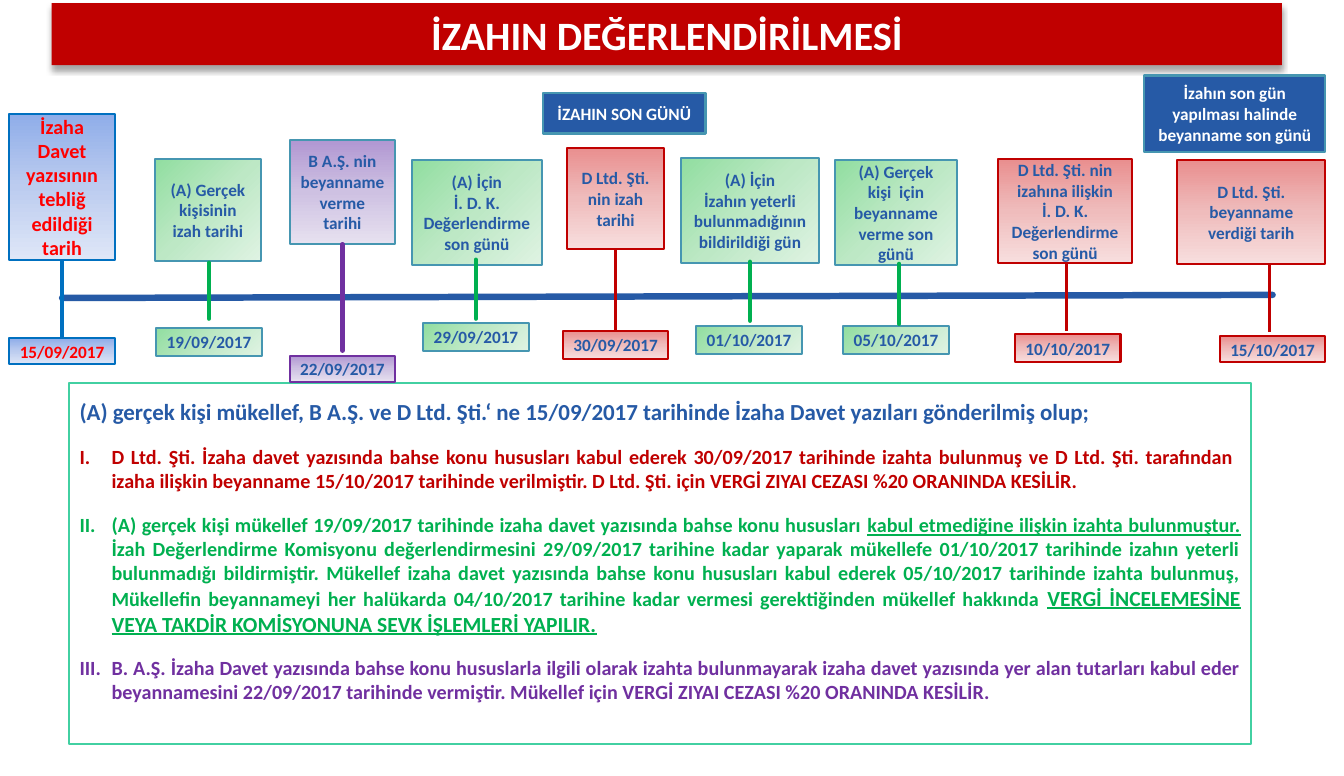
from copy import deepcopy

from lxml.etree import SubElement
from pptx import Presentation
from pptx.dml.color import RGBColor
from pptx.enum.shapes import MSO_CONNECTOR, MSO_SHAPE
from pptx.enum.text import MSO_ANCHOR, PP_ALIGN
from pptx.oxml.ns import qn
from pptx.util import Inches, Pt

FONT = "Calibri"
WHITE, BLUE, TEAL = "FFFFFF", "265AA6", "4696B1"
RED, GREEN, PURPLE, SKY = "C00000", "00B050", "7030A0", "0070C0"

TITLE = "İZAHIN DEĞERLENDİRİLMESİ"

# gradient colours, clockwise angle, box border, date border, stem colour, stem width
STYLES = {
    "invite": (("8FADE9", "BCCCEF", "DEE6F7"), 90, SKY, SKY, SKY, 2.25),
    "person": (("91DEA0", "BDE8C5", "DFF3E3"), 45, TEAL, TEAL, GREEN, 3),
    "b_company": (("B197D2", "CEC1E2", "E7E1F0"), 90, TEAL, PURPLE, PURPLE, 3),
    "d_company": (("E98F8F", "EFBCBC", "F7DEDE"), 90, RED, RED, RED, 2.25),
}

# style, text, box (left, top, width, height), date, date (left, top, height), stem (x, top, bottom)
EVENTS = [
    ("invite", "İzaha Davet yazısının tebliğ edildiği tarih", (0.09, 1.1, 1.02, 1.41),
     "15/09/2017", (0.09, 3.27, 0.25), (0.6, 2.51, 3.27)),
    ("person", "(A) Gerçek kişisinin izah tarihi", (1.5, 1.54, 1.02, 0.98),
     "19/09/2017", (1.51, 3.17, 0.27), (2.02, 2.54, 3.08)),
    ("b_company", "B A.Ş. nin beyanname verme tarihi", (2.8, 1.35, 1.02, 1.01),
     "22/09/2017", (2.8, 3.44, 0.25), (3.31, 2.36, 3.39)),
    ("person", "(A) İçin\nİ. D. K. Değerlendirme son günü", (3.98, 1.55, 1.26, 1.01),
     "29/09/2017", (4.09, 3.12, 0.27), (4.6, 2.51, 3.08)),
    ("d_company", "D Ltd. Şti. nin izah tarihi", (5.48, 1.43, 0.94, 0.98),
     "30/09/2017", (5.44, 3.2, 0.27), (5.95, 2.41, 3.2)),
    ("person", "(A) İçin\nİzahın yeterli bulunmadığının\nbildirildiği gün", (6.58, 1.53, 1.34, 1.01),
     "01/10/2017", (6.73, 3.15, 0.27), (7.25, 2.53, 3.1)),
    ("person", "(A) Gerçek kişi  için beyanname verme son günü", (8.07, 1.55, 1.18, 1.01),
     "05/10/2017", (8.15, 3.15, 0.27), (8.69, 2.55, 3.13)),
    ("d_company", "D Ltd. Şti. nin izahına ilişkin\nİ. D. K. Değerlendirme son günü", (9.65, 1.54, 1.29, 1),
     "10/10/2017", (9.81, 3.23, 0.27), (10.31, 2.54, 3.2)),
    ("d_company", "D Ltd. Şti. beyanname verdiği tarih", (11.38, 1.55, 1.43, 1),
     "15/10/2017", (11.79, 3.25, 0.25), (12.27, 2.55, 3.21)),
]
DATE_WIDTH = 1.02

DEADLINES = [
    ("İZAHIN SON GÜNÜ", (5.25, 0.9, 1.57, 0.39)),
    ("İzahın son gün\nyapılması halinde\nbeyanname son günü", (11.06, 0.73, 1.75, 0.74)),
]

INTRO = ("(A) gerçek kişi mükellef, B A.Ş. ve D Ltd. Şti.‘ ne 15/09/2017 tarihinde "
         "İzaha Davet yazıları gönderilmiş olup;")

# colour, runs of (text, size, underlined)
CASES = [
    (RED, [("D Ltd. Şti. İzaha davet yazısında bahse konu hususları kabul ederek 30/09/2017 tarihinde "
            "izahta bulunmuş ve D Ltd. Şti. tarafından  izaha ilişkin beyanname 15/10/2017 tarihinde "
            "verilmiştir. D Ltd. Şti. için VERGİ ZIYAI CEZASI %20 ORANINDA KESİLİR.", 14, False)]),
    (GREEN, [("(A) gerçek kişi mükellef 19/09/2017 tarihinde izaha davet yazısında bahse konu hususları ",
              14, False),
             ("kabul etmediğine ilişkin izahta bulunmuştur. ", 14, True),
             ("İzah Değerlendirme Komisyonu değerlendirmesini 29/09/2017 tarihine kadar yaparak "
              "mükellefe 01/10/2017 tarihinde izahın yeterli bulunmadığı bildirmiştir. Mükellef izaha "
              "davet yazısında bahse konu hususları kabul ederek 05/10/2017 tarihinde izahta bulunmuş, "
              "Mükellefin beyannameyi her halükarda 04/10/2017 tarihine kadar vermesi gerektiğinden "
              "mükellef hakkında ", 14, False),
             ("VERGİ İNCELEMESİNE VEYA TAKDİR KOMİSYONUNA SEVK İŞLEMLERİ YAPILIR.", 15, True)]),
    (PURPLE, [("B. A.Ş. İzaha Davet yazısında bahse konu hususlarla ilgili olarak izahta bulunmayarak "
               "izaha davet yazısında yer alan tutarları kabul eder beyannamesini 22/09/2017 tarihinde "
               "vermiştir. Mükellef için VERGİ ZIYAI CEZASI %20 ORANINDA KESİLİR.", 14, False)]),
]


def rgb(color):
    return RGBColor.from_string(color)


def format_run(r, size, color, underline=False):
    r.font.name, r.font.size, r.font.bold = FONT, Pt(size), True
    r.font.color.rgb = rgb(color)
    if underline:
        r.font.underline = True


def set_text(s, text, size, color):
    """Centre bold text in a shape, one paragraph per line."""
    tf = s.text_frame
    tf.text = text
    tf.word_wrap = True
    tf.vertical_anchor = MSO_ANCHOR.MIDDLE
    for p in tf.paragraphs:
        p.alignment = PP_ALIGN.CENTER
        for r in p.runs:
            format_run(r, size, color)


def fill_gradient(s, colors, angle):
    """Apply three evenly spaced stops; angle is clockwise."""
    s.fill.gradient()
    s.fill.gradient_angle = 360 - angle
    stops = s._element.spPr.find(".//" + qn("a:gsLst"))
    stops.append(deepcopy(stops[0]))
    for i, (stop, color) in enumerate(zip(s.fill.gradient_stops, colors)):
        stop.position = i / 2
        stop.color.rgb = rgb(color)


def add_box(slide, place, border, fill=None):
    s = slide.shapes.add_shape(MSO_SHAPE.RECTANGLE, *map(Inches, place))
    s.shadow.inherit = False
    s.line.color.rgb = rgb(border)
    s.line.width = Pt(1.5)
    if fill:
        s.fill.solid()
        s.fill.fore_color.rgb = rgb(fill)
    return s


def add_line(slide, x1, y1, x2, y2, color, width):
    s = slide.shapes.add_connector(MSO_CONNECTOR.STRAIGHT, *map(Inches, (x1, y1, x2, y2)))
    s.line.color.rgb = rgb(color)
    s.line.width = Pt(width)
    if width >= 3:
        s.line._get_or_add_ln().set("cap", "rnd")
    SubElement(s._element.spPr, qn("a:effectLst"))


def add_title(slide):
    s = slide.shapes.title
    s.left, s.top, s.width, s.height = map(Inches, (0.5, 0.03, 11.89, 0.6))
    s.fill.solid()
    s.fill.fore_color.rgb = rgb(RED)
    set_text(s, TITLE, 28, WHITE)
    effects = SubElement(s._element.spPr, qn("a:effectLst"))
    shadow = SubElement(effects, qn("a:outerShdw"), blurRad=str(Pt(4)), dist=str(Pt(3)),
                        dir="5400000", rotWithShape="0")
    color = SubElement(shadow, qn("a:srgbClr"), val="000000")
    SubElement(color, qn("a:alpha"), val="35000")


def add_event(slide, style, text, place, date, date_place, stem):
    colors, angle, border, date_border, stem_color, stem_width = STYLES[style]
    left, top, height = date_place
    color, size = ("FF0000", 14) if style == "invite" else (BLUE, 12)
    date_box = (left, top, DATE_WIDTH, height)
    for label, where, edge, points in ((text, place, border, size), (date, date_box, date_border, 12)):
        s = add_box(slide, where, edge)
        fill_gradient(s, colors, angle)
        set_text(s, label, points, color)
    x, start, end = stem
    add_line(slide, x, start, x, end, stem_color, stem_width)


def add_cases(slide):
    s = add_box(slide, (0.67, 3.7, 11.42, 3.49), "42D0A2", WHITE)
    tf = s.text_frame
    tf.text = INTRO
    tf.word_wrap = True
    tf.vertical_anchor = MSO_ANCHOR.MIDDLE
    tf.margin_bottom = Inches(0.29)
    p = tf.paragraphs[0]
    p.alignment = PP_ALIGN.JUSTIFY
    format_run(p.runs[0], 16, BLUE)
    for color, runs in CASES:
        p = tf.add_paragraph()
        p.alignment = PP_ALIGN.JUSTIFY
        p.space_before = Pt(13.4)
        pPr = p._p.get_or_add_pPr()
        pPr.set("marL", str(Inches(0.31)))
        pPr.set("indent", str(-Inches(0.31)))
        SubElement(pPr, qn("a:buAutoNum"), type="romanUcPeriod")
        for text, size, underline in runs:
            r = p.add_run()
            r.text = text
            format_run(r, size, color, underline)


def main():
    prs = Presentation()
    prs.slide_width, prs.slide_height = Inches(12.99), Inches(7.5)
    slide = prs.slides.add_slide(prs.slide_layouts[5])
    add_title(slide)
    add_line(slide, 0.6, 2.88, 12.3, 2.85, BLUE, 4.5)
    add_cases(slide)
    for event in EVENTS:
        add_event(slide, *event)
    for text, place in DEADLINES:
        set_text(add_box(slide, place, TEAL, BLUE), text, 12, WHITE)
    prs.save("out.pptx")


if __name__ == "__main__":
    main()
